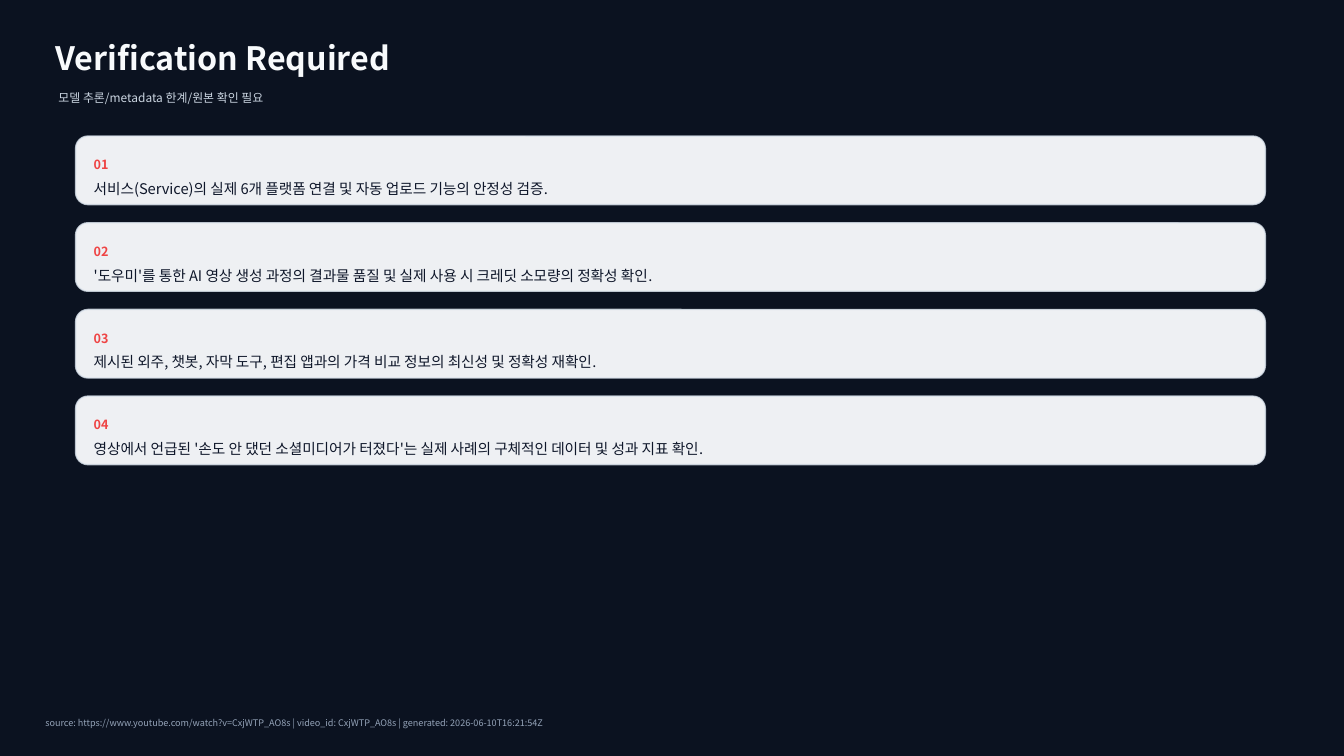
from lxml.etree import SubElement as Sub
from pptx import Presentation
from pptx.dml.color import RGBColor as RGB
from pptx.enum.shapes import MSO_SHAPE as Kind
from pptx.enum.text import MSO_ANCHOR as Anchor, MSO_AUTO_SIZE as Fit, PP_ALIGN as Align
from pptx.oxml.ns import qn
from pptx.util import Pt

SCALE = 9144  # EMU per px, 100 px to the inch
FONT = "Noto Sans CJK KR"
NIGHT = RGB(0x0B, 0x12, 0x20)
WHITE = RGB(0xF8, 0xFA, 0xFC)
MIST = RGB(0xCB, 0xD5, 0xE1)
EDGE = RGB(0xD7, 0xE0, 0xEA)
RED = RGB(0xEF, 0x44, 0x44)
INK = RGB(0x0F, 0x17, 0x2A)
GREY = RGB(0x94, 0xA3, 0xB8)

CHECKS = [
    "서비스(Service)의 실제 6개 플랫폼 연결 및 자동 업로드 기능의 안정성 검증.",
    "'도우미'를 통한 AI 영상 생성 과정의 결과물 품질 및 실제 사용 시 크레딧 소모량의 정확성 확인.",
    "제시된 외주, 챗봇, 자막 도구, 편집 앱과의 가격 비교 정보의 최신성 및 정확성 재확인.",
    "영상에서 언급된 '손도 안 댔던 소셜미디어가 터졌다'는 실제 사례의 구체적인 데이터 및 성과 지표 확인.",
]


def write(frame, text, size, color, bold=False):
    """Fill a text frame with one formatted line."""
    frame.margin_left = frame.margin_right = 0
    frame.margin_top = frame.margin_bottom = 0
    frame.word_wrap = True
    frame.auto_size = Fit.NONE
    frame.vertical_anchor = Anchor.MIDDLE
    line = frame.paragraphs[0]
    line.alignment = Align.LEFT
    run = line.add_run()
    run.text = text
    font = run.font
    font.size, font.bold, font.name = Pt(size), bold, FONT
    font.color.rgb = color
    Sub(run._r.get_or_add_rPr(), qn("a:ea"), typeface=FONT)


class Deck:
    def __init__(self, wide, high):
        self.prs = Presentation()
        self.prs.slide_width, self.prs.slide_height = self.emu(wide, high)
        self.slide = self.prs.slides.add_slide(self.prs.slide_layouts[5])
        back = self.slide.background.fill
        back.solid()
        back.fore_color.rgb = NIGHT

    def emu(self, *sizes):
        return [size * SCALE for size in sizes]

    def title(self, text, *place, **style):
        head = self.slide.shapes.title
        head.left, head.top, head.width, head.height = self.emu(*place)
        write(head.text_frame, text, **style)

    def label(self, text, *place, **style):
        box = self.slide.shapes.add_textbox(*self.emu(*place))
        write(box.text_frame, text, **style)

    def card(self, *place):
        card = self.slide.shapes.add_shape(Kind.ROUNDED_RECTANGLE, *self.emu(*place))
        card.shadow.inherit = False
        card.adjustments[0] = 0.18
        card.fill.solid()
        card.fill.fore_color.rgb = WHITE
        card.line.color.rgb = EDGE
        card.line.width = Pt(1)
        # Opacity of the fill, then of the outline
        tones = list(card.element.spPr.iter(qn("a:srgbClr")))
        for tone, alpha in zip(tones, (96, 80)):
            Sub(tone, qn("a:alpha"), val=str(alpha * 1000))


def main():
    deck = Deck(1333, 750)

    # Heading
    deck.title("Verification Required", 55, 35, 1200, 45, size=23, color=WHITE, bold=True)
    deck.label("모델 추론/metadata 한계/원본 확인 필요", 58, 83, 1150, 28, size=8.5, color=MIST)

    # Numbered cards
    for i, check in enumerate(CHECKS):
        top = 135 + 86 * i
        deck.card(75, top, 1180, 68)
        deck.label(f"{i + 1:02}", 93, top + 16, 1144, 25, size=9, color=RED, bold=True)
        deck.label(check, 93, top + 50, 1144, 4, size=10.5, color=INK)

    # Source line
    deck.label(
        "source: https://www.youtube.com/watch?v=CxjWTP_AO8s | video_id: CxjWTP_AO8s"
        " | generated: 2026-06-10T16:21:54Z",
        45, 705, 1240, 25, size=6.5, color=GREY)

    deck.prs.save("out.pptx")


if __name__ == "__main__":
    main()
